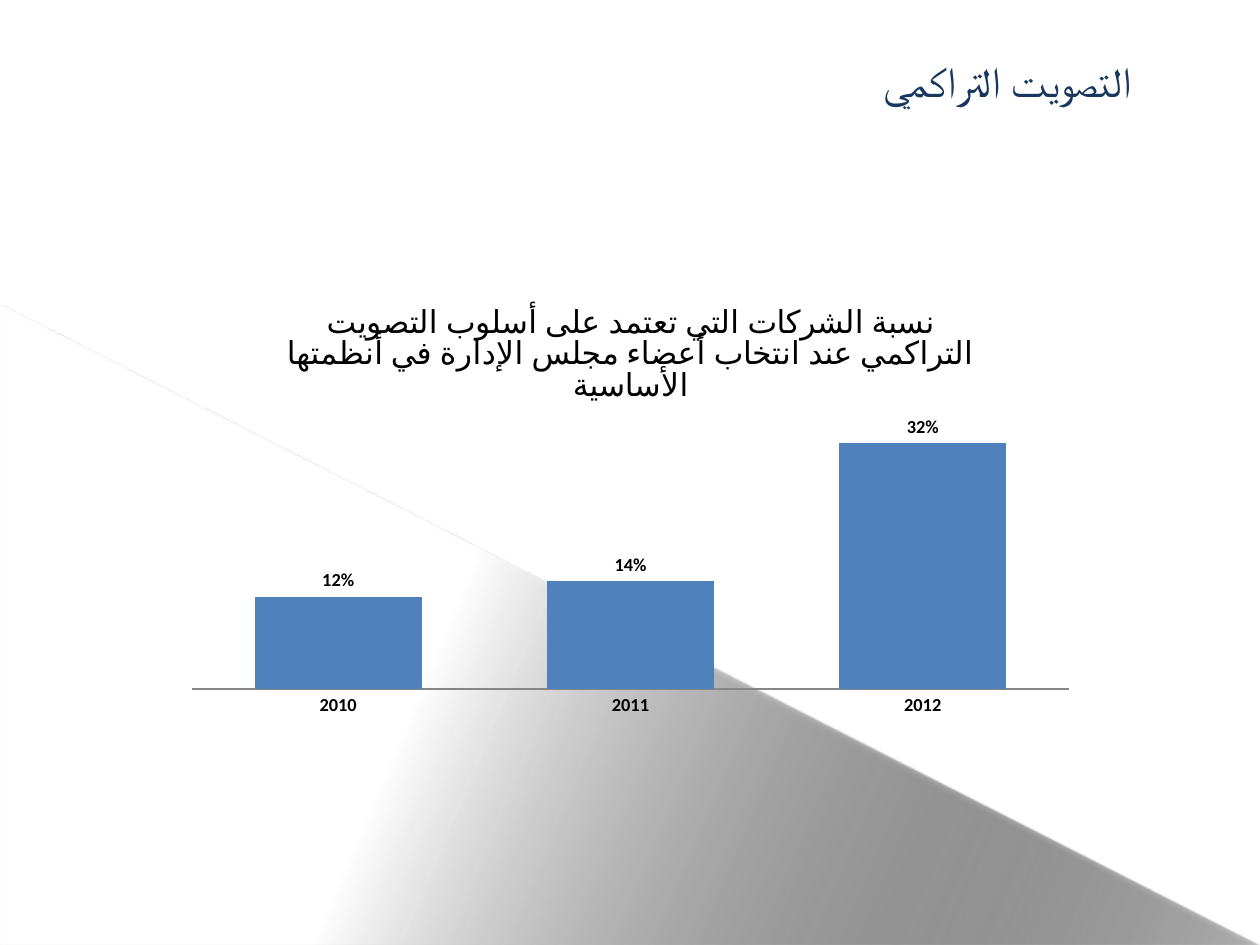
import lxml.etree
import pptx
import pptx.chart.data
import pptx.dml.color
import pptx.enum.chart
import pptx.enum.shapes
import pptx.enum.text
import pptx.oxml.ns
import pptx.util

Inches = pptx.util.Inches
Pt = pptx.util.Pt
qn = pptx.oxml.ns.qn

FONT = "Calibri"
HEADING = "التصويت التراكمي"
CHART_TITLE = (
    "نسبة الشركات التي تعتمد على أسلوب التصويت التراكمي "
    "عند انتخاب أعضاء مجلس الإدارة في أنظمتها الأساسية"
)
SHARES = {"2010": 0.12, "2011": 0.14, "2012": 0.32}


def rgb(value):
    return pptx.dml.color.RGBColor.from_string(value)


def add_child(parent, tag, **attributes):
    child = lxml.etree.SubElement(parent, qn(tag))
    for name, value in attributes.items():
        child.set(name, str(value))
    return child


def style_font(font, size, color, bold=False):
    font.name = FONT
    font.size = Pt(size)
    font.bold = bold
    font.color.rgb = rgb(color)


def write_rtl(paragraph, text, size, color, alignment):
    paragraph._p.get_or_add_pPr().set("rtl", "1")
    paragraph.alignment = alignment
    run = paragraph.add_run()
    run.text = text
    style_font(run.font, size, color)


def add_backdrop(slide):
    wedge = slide.shapes.add_shape(
        pptx.enum.shapes.MSO_SHAPE.RIGHT_TRIANGLE,
        Inches(0), Inches(2.42), Inches(10), Inches(5.08),
    )
    wedge.line.fill.background()
    wedge.fill.gradient()
    wedge.fill.gradient_angle = 337
    stops = wedge.fill.gradient_stops
    for stop, position, color in zip(stops, (0.38, 1), ("FFFFFF", "000000")):
        stop.position = position
        stop.color.rgb = rgb(color)
    properties = wedge._element.spPr
    dark = properties.findall(".//" + qn("a:srgbClr"))[-1]
    add_child(dark, "a:alpha", val=25000)

    wedge.shadow.inherit = False
    shadow = add_child(
        properties.find(qn("a:effectLst")), "a:outerShdw",
        blurRad=Pt(3.1), dist=Pt(1.8), dir=90 * 60000, rotWithShape=0,
    )
    shadow_color = add_child(shadow, "a:srgbClr", val="000000")
    add_child(shadow_color, "a:alpha", val=35000)


def add_heading(slide):
    heading = slide.shapes.add_textbox(
        Inches(1.06), Inches(0.44), Inches(8.94), Inches(0.4)
    )
    frame = heading.text_frame
    frame.word_wrap = True
    frame.auto_size = pptx.enum.text.MSO_AUTO_SIZE.SHAPE_TO_FIT_TEXT
    frame.margin_left = frame.margin_top = frame.margin_bottom = 0
    frame.margin_right = Inches(1.02)
    write_rtl(frame.paragraphs[0], HEADING, 24, "17375E",
              pptx.enum.text.PP_ALIGN.RIGHT)


def place_plot(chart, **fractions):
    plot_area = chart._chartSpace.chart.plotArea
    layout = plot_area.find(qn("c:layout"))
    if layout is None:
        layout = lxml.etree.Element(qn("c:layout"))
        plot_area.insert(0, layout)
    manual = add_child(layout, "c:manualLayout")
    add_child(manual, "c:layoutTarget", val="inner")
    for mode in ("xMode", "yMode"):
        add_child(manual, "c:" + mode, val="edge")
    for name, value in fractions.items():
        add_child(manual, "c:" + name, val=value)


def add_share_chart(slide):
    shares = pptx.chart.data.CategoryChartData(number_format="0%")
    shares.categories = list(SHARES)
    shares.add_series(CHART_TITLE, list(SHARES.values()))
    chart = slide.shapes.add_chart(
        pptx.enum.chart.XL_CHART_TYPE.COLUMN_CLUSTERED,
        Inches(1.38), Inches(2.25), Inches(7.25), Inches(3.5), shares,
    ).chart
    style_font(chart.font, 10, "000000")
    chart.has_legend = False
    chart.has_title = True
    chart.chart_title.include_in_layout = False
    write_rtl(chart.chart_title.text_frame.paragraphs[0], CHART_TITLE, 18,
              "000000", pptx.enum.text.PP_ALIGN.CENTER)
    place_plot(chart, x=0.02, y=0.31, w=0.96, h=0.61)

    years = chart.category_axis
    years.major_tick_mark = pptx.enum.chart.XL_TICK_MARK.NONE
    years.format.line.color.rgb = rgb("868686")
    style_font(years.tick_labels.font, 10.5, "000000", bold=True)

    percent = chart.value_axis
    percent.visible = False
    percent.has_major_gridlines = False
    percent.minimum_scale = 0
    percent.maximum_scale = 0.35
    percent.tick_labels.number_format = "0%"
    percent.tick_labels.number_format_is_linked = False

    columns = chart.plots[0]
    columns.gap_width = 75
    columns.overlap = 40
    columns.vary_by_categories = False
    series = columns.series[0]
    series.format.fill.solid()
    series.format.fill.fore_color.rgb = rgb("4F81BD")
    labels = series.data_labels
    labels.show_value = True
    labels.number_format = "0%"
    labels.number_format_is_linked = False
    labels.position = pptx.enum.chart.XL_LABEL_POSITION.OUTSIDE_END
    style_font(labels.font, 10.5, "000000", bold=True)


def main():
    deck = pptx.Presentation()
    deck.slide_width = Inches(10)
    deck.slide_height = Inches(7.5)
    slide = deck.slides.add_slide(deck.slide_layouts[6])
    slide.background.fill.solid()
    slide.background.fill.fore_color.rgb = rgb("FFFFFF")
    add_backdrop(slide)
    add_heading(slide)
    add_share_chart(slide)
    deck.save("out.pptx")


if __name__ == "__main__":
    main()
